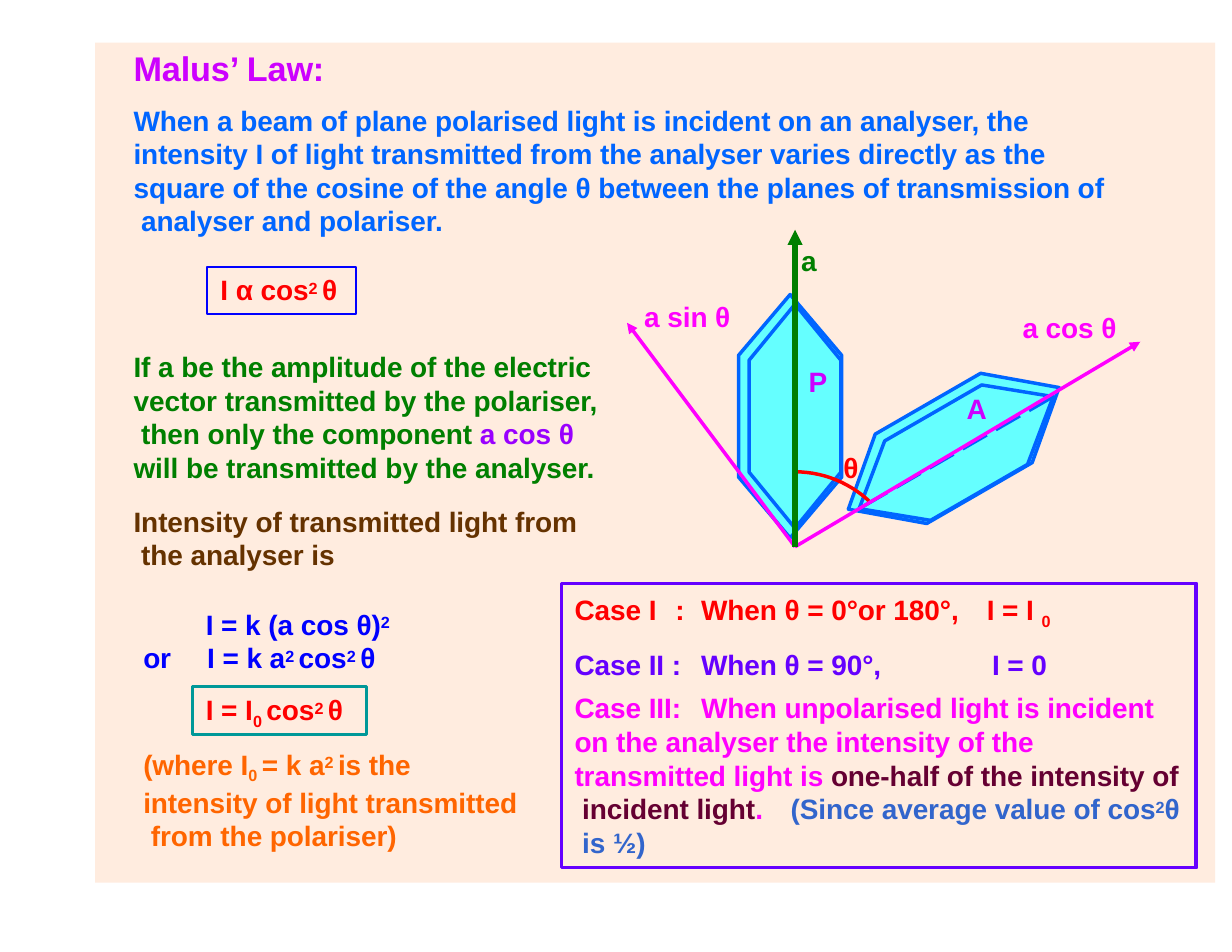
import math

import lxml.etree
import pptx
import pptx.dml.color
import pptx.enum.dml
import pptx.enum.shapes
import pptx.enum.text
import pptx.oxml.ns
import pptx.util

Cm, Pt = pptx.util.Cm, pptx.util.Pt
PEACH, CYAN, PLATE_BLUE = "FFECDF", "65FFFF", "0065FF"
RED, GREEN, BLUE, PURPLE = "FF0000", "007F00", "0000FF", "CC00FF"
MAGENTA, VIOLET, BROWN, ORANGE = "FF00FF", "6500FF", "653200", "FF6500"
TEAL, PLUM, STEEL, GRAPE = "009898", "650032", "3265CC", "9900FF"
SUP, SUB = 23000, -23000


def rgb(value):
    return pptx.dml.color.RGBColor.from_string(value)


def add_child(parent, tag, **attributes):
    return lxml.etree.SubElement(parent, pptx.oxml.ns.qn(tag), attributes)


def paint(shape, fill=None, line=None, weight=2.25):
    shape.shadow.inherit = False
    if fill:
        shape.fill.solid()
        shape.fill.fore_color.rgb = rgb(fill)
    else:
        shape.fill.background()
    if line:
        shape.line.color.rgb = rgb(line)
        shape.line.width = Pt(weight)
    else:
        shape.line.fill.background()


def add_box(page, box, **style):
    rectangle = pptx.enum.shapes.MSO_SHAPE.RECTANGLE
    shape = page.shapes.add_shape(rectangle, *map(Cm, box))
    paint(shape, **style)
    return shape


def write_spans(para, colour, spans, size):
    """Each span is a text or (text, baseline[, colour]); a newline breaks the line."""
    for span in spans:
        text, baseline, tint = ((span,) if isinstance(span, str) else span) + (0, colour)[
            (0 if isinstance(span, str) else len(span) - 1):]
        for number, line in enumerate(text.split("\n")):
            if number:
                para.add_line_break()
            if not line:
                continue
            run = para.add_run()
            run.text = line
            run.font.name, run.font.size, run.font.bold = "Arial", Pt(size), True
            run.font.color.rgb = rgb(tint)
            properties = run.font._element
            properties.set("spc", "-5")
            if baseline:
                properties.set("baseline", str(baseline))


def fill_text(shape, paragraphs, size=18, margin=(0.03, 0.03)):
    """Each paragraph is (colour, spans[, space before in pt, tab stops, indent])."""
    frame = shape.text_frame
    frame.word_wrap = True
    frame.vertical_anchor = pptx.enum.text.MSO_ANCHOR.TOP
    frame.margin_left, frame.margin_top = map(Cm, margin)
    frame.margin_right = frame.margin_bottom = 0
    for number, (colour, spans, *layout) in enumerate(paragraphs):
        before, tabs, indent = layout + [0, (), 0][len(layout):]
        para = frame.add_paragraph() if number else frame.paragraphs[0]
        para.alignment = pptx.enum.text.PP_ALIGN.LEFT
        para.space_before = Pt(before)
        properties = para._p.get_or_add_pPr()
        properties.set("marL", str(Cm(indent)))
        if tabs:
            stops = add_child(properties, "a:tabLst")
            for tab in tabs:
                add_child(stops, "a:tab", pos=str(Cm(tab)), algn="l")
        write_spans(para, colour, spans, size)


def add_text(page, box, *paragraphs, size=18):
    fill_text(page.shapes.add_textbox(*map(Cm, box)), paragraphs, size)


def add_formula(page, box, spans, line, weight):
    shape = add_box(page, box, fill=PEACH, line=line, weight=weight)
    fill_text(shape, [(RED, spans)], margin=(0.3, 0.14))


def add_outline(page, points, close, **style):
    start, *rest = [(Cm(x), Cm(y)) for x, y in points]
    builder = page.shapes.build_freeform(*start, scale=1.0)
    builder.add_line_segments(rest, close=close)
    shape = builder.convert_to_shape()
    paint(shape, **style)


def add_line(page, start, end, colour, weight):
    straight = pptx.enum.shapes.MSO_CONNECTOR.STRAIGHT
    line = page.shapes.add_connector(straight, *map(Cm, start + end))
    line.line.color.rgb = rgb(colour)
    line.line.width = Pt(weight)
    add_child(line._element.spPr, "a:effectLst")
    return line


def add_arrow(page, start, end, colour, weight):
    arrow = add_line(page, start, end, colour, weight)
    add_child(arrow.line._get_or_add_ln(), "a:tailEnd", type="triangle", w="med", len="med")


def add_plate(page, centre, degrees):
    """Bevelled hexagonal plate with its dashed axis, turned clockwise about its centre."""
    cos, sin = math.cos(math.radians(degrees)), math.sin(math.radians(degrees))

    def turn(x, y):
        return centre[0] + x * cos - y * sin, centre[1] + x * sin + y * cos

    shift = 0.11
    for half_width, tip, shoulder, offset in ((1.17, 2.76, 1.38, 0), (1.04, 2.54, 1.27, shift)):
        corners = [(0, -tip), (half_width, -shoulder), (half_width, shoulder),
                   (0, tip), (-half_width, shoulder), (-half_width, -shoulder)]
        add_outline(page, [turn(x + offset, y) for x, y in corners], True,
                    fill=CYAN, line=PLATE_BLUE)
    axis = add_line(page, turn(shift, -2.54), turn(shift, 2.54), PLATE_BLUE, 2.25)
    axis.line.dash_style = pptx.enum.dml.MSO_LINE.LONG_DASH


def add_statement(page, box):
    left, top, width, height = box
    add_text(page, (left, top, 6, 1), (PURPLE, ["Malus’ Law:"]), size=22)
    add_text(page, (left, top + 1.27, width, height - 1.27), (PLATE_BLUE, [
        "When a beam of plane polarised light is incident on an analyser, the\n"
        "intensity I of light transmitted from the analyser varies directly as the\n"
        "square of the cosine of the angle θ between the planes of transmission of\n"
        " analyser and polariser."]))


def add_diagram(page, box):
    left, top, width, height = box

    def at(x, y):
        return left + x, top + y

    origin = at(3.81, height)
    add_plate(page, at(3.7, 4.23), 0)
    add_plate(page, at(7.41, 4.96), 60)
    arc_x, arc_y = at(3.81, 7.95)
    angles = [math.radians(44.5 * step / 14) for step in range(15)]
    arc = [(arc_x + 2.46 * math.sin(a), arc_y - 2.46 * math.cos(a)) for a in angles]
    add_outline(page, arc, False, line=RED)
    add_arrow(page, origin, at(width, 2.54), MAGENTA, 2.25)
    add_arrow(page, origin, at(0, 2.11), MAGENTA, 2.25)
    labels = [("P", 4.09, 3.02, 0.55, PURPLE), ("A", 7.67, 3.65, 0.55, PURPLE),
              ("θ", 4.88, 4.98, 0.5, RED), ("a cos θ", 8.94, 1.8, 2.4, MAGENTA),
              ("a sin θ", 0.36, 1.55, 2.2, MAGENTA), ("a", 3.92, 0.28, 0.5, GREEN)]
    for text, x, y, label_width, colour in labels:
        add_text(page, at(x, y) + (label_width, 0.84), (colour, [text]))
    add_arrow(page, origin, at(3.81, 0), GREEN, 3.25)


def add_derivation(page, box):
    left, top, width, height = box
    add_text(page, (left, top, width, 5.11),
             (GREEN, ["If a be the amplitude of the electric\n"
                      "vector transmitted by the polariser,\n then only the component ",
                      ("a cos θ", 0, GRAPE), "\nwill be transmitted by the analyser."]),
             (BROWN, ["Intensity of transmitted light from\n the analyser is"], 13.1))
    add_text(page, (left + 0.22, top + 5.84, 6, 1.6),
             (BLUE, ["I = k (a cos θ)", ("2", SUP)], 0, (), 1.42),
             (BLUE, ["or\tI = k a", ("2 ", SUP), "cos", ("2 ", SUP), "θ"], 0, (1.45,)))
    add_formula(page, (left + 1.37, top + 7.67, 3.94, 1.09),
                ["I = I", ("0 ", SUB), "cos", ("2 ", SUP), "θ"], TEAL, 2.25)
    add_text(page, (left + 0.22, top + 9.02, width - 1.5, height - 9.02),
             (ORANGE, ["(where I", ("0 ", SUB), "= k a", ("2 ", SUP), "is the\n"
                       "intensity of light transmitted\n from the polariser)"]))


def add_cases(page, box):
    left, top, width, height = box
    add_box(page, box, line=VIOLET)
    add_text(page, (left + 0.27, top + 0.18, width - 0.35, 2.2),
             (RED, ["Case I\t:\tWhen θ = 0°or 180°,\tI = I ", ("0", SUB)], 0, (2.29, 2.87, 9.35)),
             (VIOLET, ["Case II :\tWhen θ = 90°,\tI = 0"], 10.9, (2.87, 9.47)))
    add_text(page, (left + 0.27, top + 2.41, width - 0.3, height - 2.5),
             (MAGENTA, ["Case III:\tWhen unpolarised light is incident\n"
                        "on the analyser the intensity of the\ntransmitted light is ",
                        ("one-half of the intensity of\n incident light", 0, PLUM), ".\t",
                        ("(Since average value of cos", 0, STEEL), ("2", SUP, STEEL),
                        ("θ\n is ½)", 0, STEEL)], 0, (2.87, 4.9)))


def main():
    deck = pptx.Presentation()
    deck.slide_width, deck.slide_height = Cm(27.94), Cm(21.59)
    page = deck.slides.add_slide(deck.slide_layouts[6])
    add_box(page, (2.16, 0.97, 25.4, 19.05), fill=PEACH)
    add_statement(page, (3, 1.04, 23, 4.4))
    add_formula(page, (4.7, 6.05, 3.38, 1.07), ["I α cos", ("2 ", SUP), "θ"], BLUE, 1.5)
    add_diagram(page, (14.22, 5.21, 11.64, 7.19))
    add_derivation(page, (3, 7.9, 11, 11.4))
    add_cases(page, (12.73, 13.23, 14.4, 6.45))
    deck.save("out.pptx")


if __name__ == "__main__":
    main()
